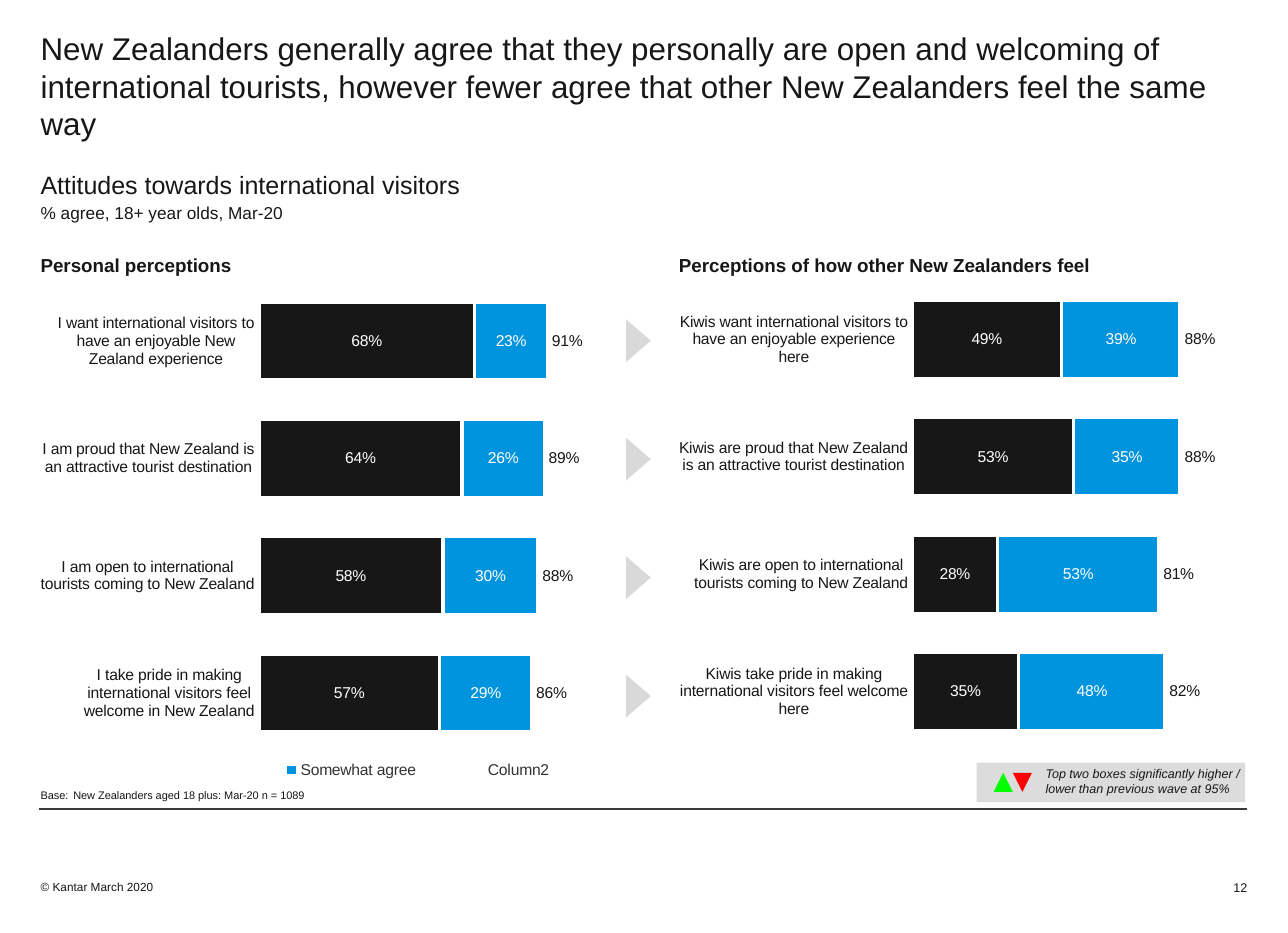
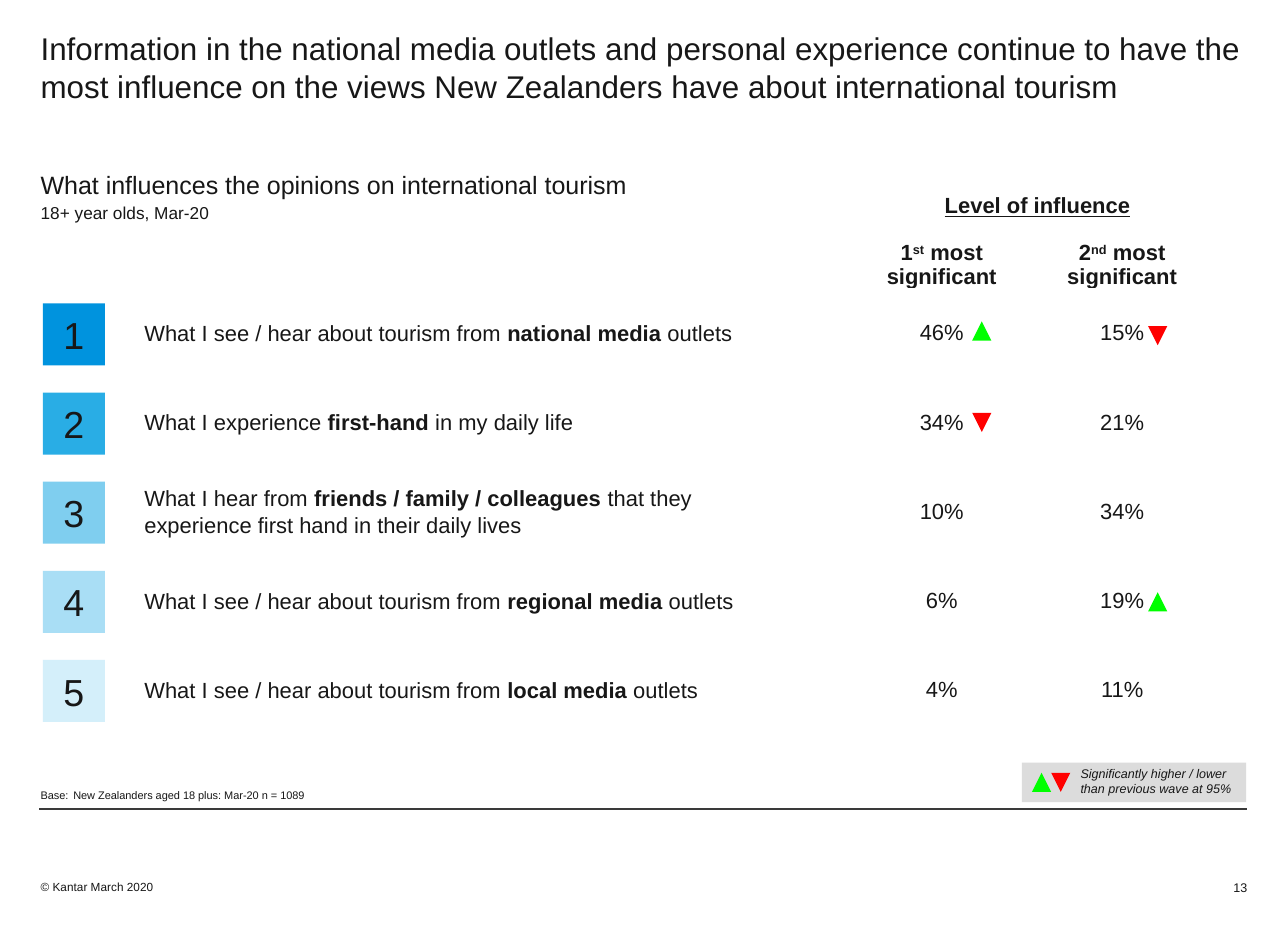
from dataclasses import dataclass

from lxml.etree import SubElement
from pptx import Presentation
from pptx.chart.data import CategoryChartData
from pptx.dml.color import RGBColor
from pptx.enum.chart import XL_CHART_TYPE as CT, XL_LABEL_POSITION as LP
from pptx.enum.chart import XL_LEGEND_POSITION, XL_TICK_LABEL_POSITION, XL_TICK_MARK
from pptx.enum.shapes import MSO_CONNECTOR, MSO_SHAPE as SH
from pptx.enum.text import MSO_ANCHOR as VA, MSO_AUTO_SIZE, PP_ALIGN as AL
from pptx.oxml import parse_xml
from pptx.oxml.ns import nsdecls, qn
from pptx.util import Pt


@dataclass(frozen=True)
class Theme:
    font: str = "Arial"
    ink: str = "171717"
    blue: str = "0093DE"
    white: str = "FFFFFF"
    rule: str = "3A3A3A"
    legend: str = "333333"
    panel: str = "DCDCDC"
    arrow: str = "D9D9D9"
    up: str = "00FF00"
    down: str = "FF0000"
    title: int = 20
    subtitle: int = 16
    rank: int = 24
    item: int = 14
    heading: int = 12
    detail: int = 11
    label: int = 10
    small: int = 8
    footer: float = 7.5
    base: int = 7


T = Theme()
LEFT, WIDTH = 36, 1070
BASE = "Base:\tNew Zealanders aged 18 plus: Mar-20 n = 1089"


def px(*lengths):
    """100 px to the inch."""
    emu = [round(n * 9144) for n in lengths]
    return emu if len(emu) > 1 else emu[0]


def rgb(hex_code):
    return RGBColor.from_string(hex_code)


# Text
def style(font, size, color=T.ink, bold=False):
    font.name, font.size, font.bold = T.font, Pt(size), bold
    font.color.rgb = rgb(color)


def write(p, runs, size, align=AL.LEFT, leading=1.0, bold=False):
    """Runs are (text, flags); flags: b bold, i italic, u underline, ^ raised."""
    p.alignment, p.line_spacing = align, leading
    for text, flags in [(runs, "")] if isinstance(runs, str) else runs:
        r = p.add_run()
        r.text = text
        style(r.font, size, bold=bold or "b" in flags)
        r.font.italic, r.font.underline = "i" in flags, "u" in flags
        if "^" in flags:
            r._r.get_or_add_rPr().set("baseline", "30000")


def frame(tf, anchor=VA.TOP, insets=(0, 0, 0, 0)):
    tf.word_wrap, tf.auto_size, tf.vertical_anchor = True, MSO_AUTO_SIZE.NONE, anchor
    tf.margin_left, tf.margin_top, tf.margin_right, tf.margin_bottom = px(*insets)
    return tf


def text(s, box, runs, size, align=AL.LEFT, anchor=VA.TOP, insets=(0, 0, 0, 0), bold=False):
    sp = s.shapes.add_textbox(*px(*box))
    write(frame(sp.text_frame, anchor, insets).paragraphs[0], runs, size, align, bold=bold)
    return sp


# Shapes
def shape(s, kind, box, fill, rotation=0):
    sp = s.shapes.add_shape(kind, *px(*box))
    sp.shadow.inherit = False
    sp.fill.solid()
    sp.fill.fore_color.rgb = rgb(fill)
    sp.line.fill.background()
    sp.rotation = rotation
    return sp


def change_mark(s, x, y, up):
    shape(s, SH.FLOWCHART_EXTRACT, (x, y, 17, 17), T.up if up else T.down, 0 if up else 180)


# Parts shared by both slides
def layout_footer(s):
    """Rule and copyright line, drawn once and moved to the layout."""
    rule = s.shapes.add_connector(MSO_CONNECTOR.STRAIGHT, *px(35, 717, 1106, 717))
    rule.line.color.rgb, rule.line.width = rgb(T.rule), Pt(1.25)
    SubElement(rule.element.spPr, qn("a:effectLst"))
    owner = text(s, (LEFT, 765, 278, 58), "© Kantar March 2020", T.footer,
                 anchor=VA.BOTTOM, insets=(0, 0, 0, 31))
    for sp in (rule, owner):
        s.slide_layout.shapes.element.append(sp.element)


def headed_slide(prs, title, subtitle, detail, number):
    s = prs.slides.add_slide(prs.slide_layouts[1])
    head, body = s.shapes.title, s.placeholders[1]
    head.left, head.top, head.width, head.height = px(LEFT, 0, WIDTH, 124)
    body.left, body.top, body.width, body.height = px(LEFT, 124, 684, 92)
    write(frame(head.text_frame, insets=(0, 26, 0, 0)).paragraphs[0], title, T.title)

    tf = frame(body.text_frame, insets=(0, 26, 0, 0))
    for p, line, size in ((tf.paragraphs[0], subtitle, T.subtitle),
                          (tf.add_paragraph(), detail, T.detail)):
        write(p, line, size)
        pPr = p._p.get_or_add_pPr()
        pPr.set("marL", "0")
        pPr.set("indent", "0")
        p.space_before = Pt(2.2 if line == detail else 0)
        SubElement(pPr, qn("a:buNone"))

    base = text(s, (LEFT, 665, 735, 46), BASE, T.base, anchor=VA.BOTTOM)
    tabs = SubElement(base.text_frame.paragraphs[0]._p.get_or_add_pPr(), qn("a:tabLst"))
    SubElement(tabs, qn("a:tab"), pos=str(px(29)), algn="l")
    text(s, (1043, 763, 63, 30), str(number), T.small, AL.RIGHT, VA.BOTTOM)
    return s


def change_key(s, box, indent, text_at, note):
    x, y, w, h = box
    shape(s, SH.RECTANGLE, box, T.panel)
    for i, up in enumerate((True, False)):
        change_mark(s, x + indent + 17 * i, y + 9, up)
    text(s, (x + text_at, y - 1, w - text_at + 11, h), [(note, "i")], T.small,
         insets=(4, 4, 4, 4))


# Charts
def set_layout(parent, index, x, y, w, h, inner=False):
    for old in parent.findall(qn("c:layout")):
        parent.remove(old)
    target = '<c:layoutTarget val="inner"/>' if inner else ""
    sizes = "".join(f'<c:{k} val="{v}"/>' for k, v in zip("xywh", (x, y, w, h)))
    parent.insert(index, parse_xml(
        f'<c:layout {nsdecls("c")}><c:manualLayout>{target}<c:xMode val="edge"/>'
        f'<c:yMode val="edge"/>{sizes}</c:manualLayout></c:layout>'))


def chart_legend(chart):
    chart.has_legend = True
    chart.legend.position = XL_LEGEND_POSITION.LEFT
    chart.legend.include_in_layout = False
    style(chart.legend.font, T.label, T.legend)
    legend = chart.element.xpath("c:chart/c:legend")[0]
    # Entries of a bar chart are counted from the last series
    legend.insert(1, parse_xml(f'<c:legendEntry {nsdecls("c")}><c:idx val="2"/>'
                               '<c:delete val="1"/></c:legendEntry>'))
    set_layout(legend, 2, 0.34, 0.935, 0.65, 0.05)


def agreement_chart(s, box, heading, rows, plot_box, names=("", "", "")):
    x, y, w, h = box
    data = CategoryChartData(number_format="###0%")
    data.categories = [row[0] for row in rows]
    for i, name in enumerate(names, 1):
        data.add_series(name, [row[i] / 100 for row in rows])
    chart = s.shapes.add_chart(CT.BAR_STACKED, *px(*box), data).chart
    chart.has_title = False
    chart.has_legend = False
    style(chart.font, T.label, T.legend)

    cat, val = chart.category_axis, chart.value_axis
    cat.reverse_order = True
    style(cat.tick_labels.font, T.label)
    val.minimum_scale, val.maximum_scale = 0, 1.1
    val.tick_label_position = XL_TICK_LABEL_POSITION.NONE
    for axis in (cat, val):
        axis.has_major_gridlines = False
        axis.major_tick_mark = XL_TICK_MARK.NONE
        axis.format.line.fill.background()

    plot = chart.plots[0]
    plot.gap_width, plot.overlap, plot.vary_by_categories = 50, 100, False
    for series, fill in zip(plot.series, (T.ink, T.blue, None)):
        if fill:
            series.format.fill.solid()
            series.format.fill.fore_color.rgb = rgb(fill)
            series.format.line.color.rgb = rgb(T.white)
            series.format.line.width = Pt(2.25)
        else:
            series.format.fill.background()
            series.format.line.fill.background()
        labels = series.data_labels
        labels.show_value = True
        labels.number_format, labels.number_format_is_linked = "###0%", False
        labels.position = LP.CENTER if fill else LP.INSIDE_BASE
        style(labels.font, T.label, T.white if fill else T.ink)

    set_layout(chart.element.xpath("c:chart/c:plotArea")[0], 0, *plot_box, inner=True)
    if any(names):
        chart_legend(chart)
    text(s, (x, y + 9, 370, 25), heading, T.heading, anchor=VA.MIDDLE,
         insets=(0, 0, 0, 5), bold=True)


# Ranked list
def ranked_item(s, x, y, rank, fill, runs):
    sp = shape(s, SH.RECTANGLE, (x, y, 55, 55), fill)
    write(frame(sp.text_frame, VA.MIDDLE).paragraphs[0], str(rank), T.rank, AL.CENTER)
    text(s, (x + 90, y + 1, 546, 55), runs, T.item, anchor=VA.MIDDLE, insets=(0, 0, 0, 5))


def influence_table(s, x, y, col_w, row_h, rows):
    table = s.shapes.add_table(len(rows), 2, *px(x, y, 2 * col_w, len(rows) * row_h)).table
    table.first_row = table.horz_banding = False
    for col in table.columns:
        col.width = px(col_w)
    for i, row in enumerate(rows):
        for j, runs in enumerate(row):
            cell = table.cell(i, j)
            cell.fill.background()
            cell.vertical_anchor = VA.MIDDLE if i else VA.BOTTOM
            cell.margin_left = cell.margin_top = cell.margin_right = px(1)
            cell.margin_bottom = 0
            write(cell.text_frame.paragraphs[0], runs, T.item, AL.CENTER, 0.95, bold=i == 0)
    text(s, (x + 20, y - 7, 290, 28), [("Level of influence", "bu")], T.item, AL.CENTER)


# Slides
def attitudes_slide(prs):
    s = headed_slide(
        prs, "New Zealanders generally agree that they personally are open and welcoming of "
        "international tourists, however fewer agree that other New Zealanders feel the same way",
        "Attitudes towards international visitors", "% agree, 18+ year olds, Mar-20", 12)
    agreement_chart(s, (LEFT, 216, 503, 486), "Personal perceptions", [
        ("I want international visitors to have an enjoyable New Zealand experience", 68, 23, 91),
        ("I am proud that New Zealand is an attractive tourist destination", 64, 26, 89),
        ("I am open to international tourists coming to New Zealand", 58, 30, 88),
        ("I take pride in making international visitors feel welcome in New Zealand", 57, 29, 86),
    ], (0.384, 0.071, 0.616, 0.856), ("", "Somewhat agree", "Column2"))
    agreement_chart(s, (602, 216, 504, 486), "Perceptions of how other New Zealanders feel", [
        ("Kiwis want international visitors to have an enjoyable experience here", 49, 39, 88),
        ("Kiwis are proud that New Zealand is an attractive tourist destination", 53, 35, 88),
        ("Kiwis are open to international tourists coming to New Zealand", 28, 53, 81),
        ("Kiwis take pride in making international visitors feel welcome here", 35, 48, 82),
    ], (0.409, 0.068, 0.591, 0.856))
    for i in range(4):
        shape(s, SH.ISOSCELES_TRIANGLE, (547, 291 + 105 * i, 38, 22), T.arrow, 90)
    change_key(s, (866, 676, 238, 35), 15, 57,
               "Top two boxes significantly higher / lower than previous wave at 95%")
    return s


def influences_slide(prs):
    s = headed_slide(
        prs, "Information in the national media outlets and personal experience continue to have "
        "the most influence on the views New Zealanders have about international tourism",
        "What influences the opinions on international tourism", "18+ year olds, Mar-20", 13)
    heard = "What I see / hear about tourism from "
    # Fill, wording, shares, change marks as (column, up, offset)
    items = [
        (T.blue, (heard, "national media ", "outlets"), ("46%", "15%"),
         [(0, True, 16), (1, False, 20)]),
        ("29ADE5", ("What I experience ", "first-hand", " in my daily life"), ("34%", "21%"),
         [(0, False, 18)]),
        ("7FCEEF", ("What I hear from ", "friends / family / colleagues ",
                    "that they experience first hand in their daily lives"), ("10%", "34%"), []),
        ("A9DEF5", (heard, "regional media ", "outlets"), ("6%", "19%"), [(1, True, 19)]),
        ("D4EFFA", (heard, "local media ", "outlets"), ("4%", "11%"), []),
    ]
    header = [[(n, ""), (suffix, "^"), (" most significant", "")]
              for n, suffix in (("1", "st"), ("2", "nd"))]
    influence_table(s, 755, 177, 160, 79, [header] + [item[2] for item in items])
    for i, (fill, words, _, marks) in enumerate(items):
        y = 269 + 79 * i
        ranked_item(s, 38, y, i + 1, fill, list(zip(words, ("", "b", ""))))
        for col, up, dy in marks:
            change_mark(s, 862 + 156 * col, y + dy, up)
    change_key(s, (906, 676, 199, 35), 9, 48,
               "Significantly higher / lower than previous wave at 95%")


def main():
    prs = Presentation()
    prs.slide_width, prs.slide_height = px(1142, 827)
    layout_footer(attitudes_slide(prs))
    influences_slide(prs)
    prs.save("out.pptx")


if __name__ == "__main__":
    main()
